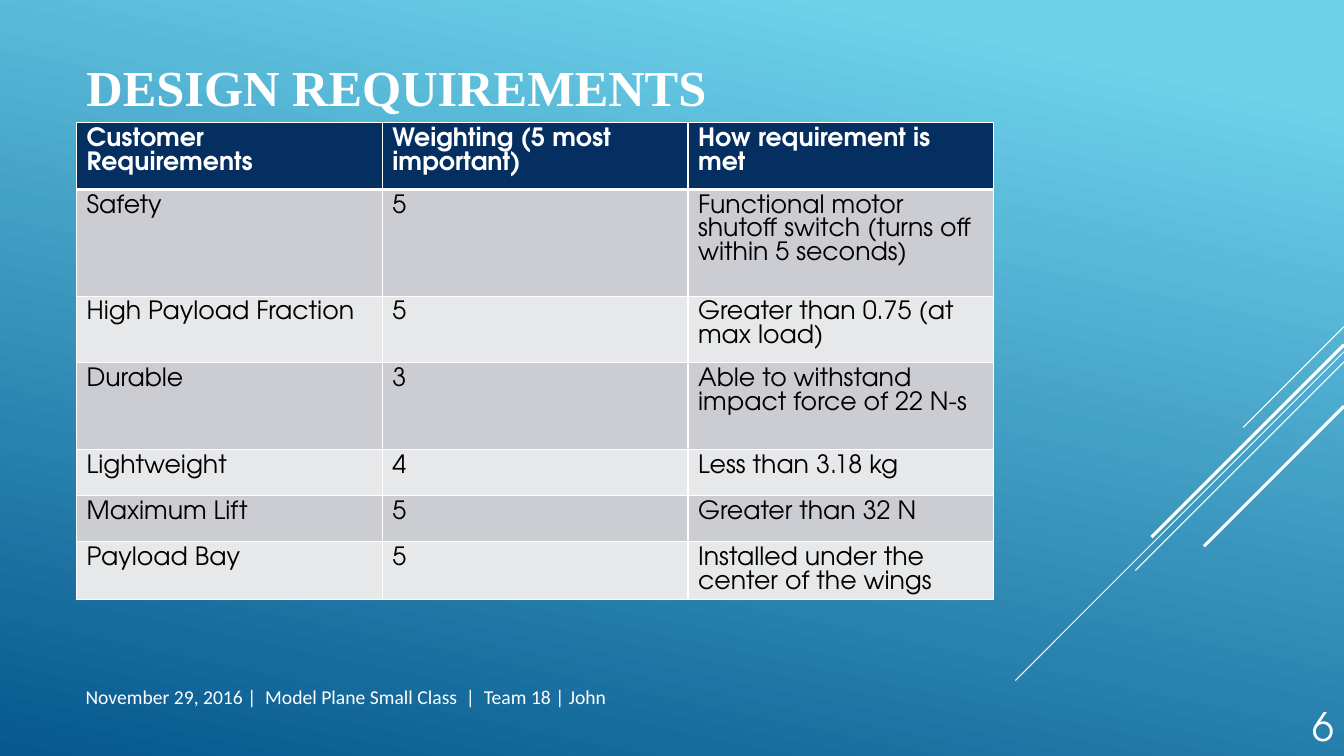
from lxml import etree
from pptx import Presentation
from pptx.dml.color import RGBColor
from pptx.enum.shapes import MSO_CONNECTOR
from pptx.enum.text import MSO_ANCHOR, PP_ALIGN
from pptx.oxml.ns import qn
from pptx.util import Pt

WHITE = RGBColor(0xFF, 0xFF, 0xFF)
BLACK = RGBColor(0x00, 0x00, 0x00)
NAVY = RGBColor(0x05, 0x2F, 0x61)
GREY = RGBColor(0xCC, 0xCD, 0xD2)
LIGHT_GREY = RGBColor(0xE7, 0xE8, 0xEA)
SKY = RGBColor(0x6E, 0xD2, 0xEB)
DEEP_BLUE = RGBColor(0x06, 0x58, 0x8E)
STRAIGHT = MSO_CONNECTOR.STRAIGHT
TOP, MIDDLE, BOTTOM = MSO_ANCHOR.TOP, MSO_ANCHOR.MIDDLE, MSO_ANCHOR.BOTTOM
LEFT, RIGHT = PP_ALIGN.LEFT, PP_ALIGN.RIGHT
BODY_FONT = "TeX Gyre Adventor"
SLIDE_W, SLIDE_H = 960, 540


def write(tf, text, color, align=LEFT, **font):
    p = tf.paragraphs[0]
    p.alignment = align
    r = p.add_run()
    r.text = text
    r.font.color.rgb = color
    for name, value in font.items():
        setattr(r.font, name, value)


def add_border(cell, side, width):
    ln = etree.SubElement(cell._tc.get_or_add_tcPr(), qn("a:ln" + side), w=str(Pt(width)))
    fill = etree.SubElement(ln, qn("a:solidFill"))
    etree.SubElement(fill, qn("a:srgbClr"), val=str(WHITE))


prs = Presentation()
prs.slide_width, prs.slide_height = Pt(SLIDE_W), Pt(SLIDE_H)
s = prs.slides.add_slide(prs.slide_layouts[6])

bg = s.background.fill
bg.gradient()
bg.gradient_angle = 258
for stop, position, color in zip(bg.gradient_stops, (0.1, 1), (SKY, DEEP_BLUE)):
    stop.position = position
    stop.color.rgb = color

diagonals = [
    (233.3, 72, 0.75),
    (251.3, 234.7, 0.75),
    (258.5, 149, 0.75),
    (246.2, 137.5, 2.25),
    (290.2, 100, 2.25),
]
for y, run, width in diagonals:
    line = s.shapes.add_connector(STRAIGHT, Pt(SLIDE_W), Pt(y), Pt(SLIDE_W - run), Pt(y + run))
    line.line.color.rgb = WHITE
    line.line.width = Pt(width)
    etree.SubElement(line._element.spPr, qn("a:effectLst"))

texts = [
    ("DESIGN REQUIREMENTS", (54.7, 25.9, 722.9, 71.3), MIDDLE, LEFT,
     {"name": "Times New Roman", "size": Pt(36), "bold": True}),
    ("November 29, 2016 |  Model Plane Small Class  |  Team 18 | John", (54, 486, 594, 28.8), TOP, LEFT,
     {"name": "Calibri", "size": Pt(14)}),
    ("6", (870, 486, 90, 52.6), BOTTOM, RIGHT, {"name": BODY_FONT, "size": Pt(28)}),
]
for text, box, anchor, align, font in texts:
    tf = s.shapes.add_textbox(*map(Pt, box)).text_frame
    tf.word_wrap = True
    tf.vertical_anchor = anchor
    write(tf, text, WHITE, align, **font)

requirements = [
    ("Customer Requirements", "Weighting (5 most important)", "How requirement is met"),
    ("Safety", "5", "Functional motor shutoff switch (turns off within 5 seconds)"),
    ("High Payload Fraction", "5", "Greater than 0.75 (at max load)"),
    ("Durable", "3", "Able to withstand impact force of 22 N-s"),
    ("Lightweight", "4", "Less than 3.18 kg"),
    ("Maximum Lift", "5", "Greater than 32 N"),
    ("Payload Bay", "5", "Installed under the center of the wings"),
]
row_heights = (47.5, 76.3, 47.5, 61.9, 33.1, 33.1, 41)
table = s.shapes.add_table(7, 3, Pt(54.7), Pt(87.8), Pt(655.2), Pt(sum(row_heights))).table
for column in table.columns:
    column.width = Pt(218.4)
for i, (height, values) in enumerate(zip(row_heights, requirements)):
    table.rows[i].height = Pt(height)
    header = i == 0
    for cell, value in zip(table.rows[i].cells, values):
        for side, width in (("L", 1), ("R", 1), ("T", 3 if i == 1 else 1), ("B", 3 if header else 1)):
            add_border(cell, side, width)
        cell.fill.solid()
        cell.fill.fore_color.rgb = NAVY if header else (LIGHT_GREY, GREY)[i % 2]
        write(cell.text_frame, value, WHITE if header else BLACK, name=BODY_FONT, size=Pt(18), bold=header)
        cell.text_frame.paragraphs[0].line_spacing = Pt(16.9)

prs.save("out.pptx")
